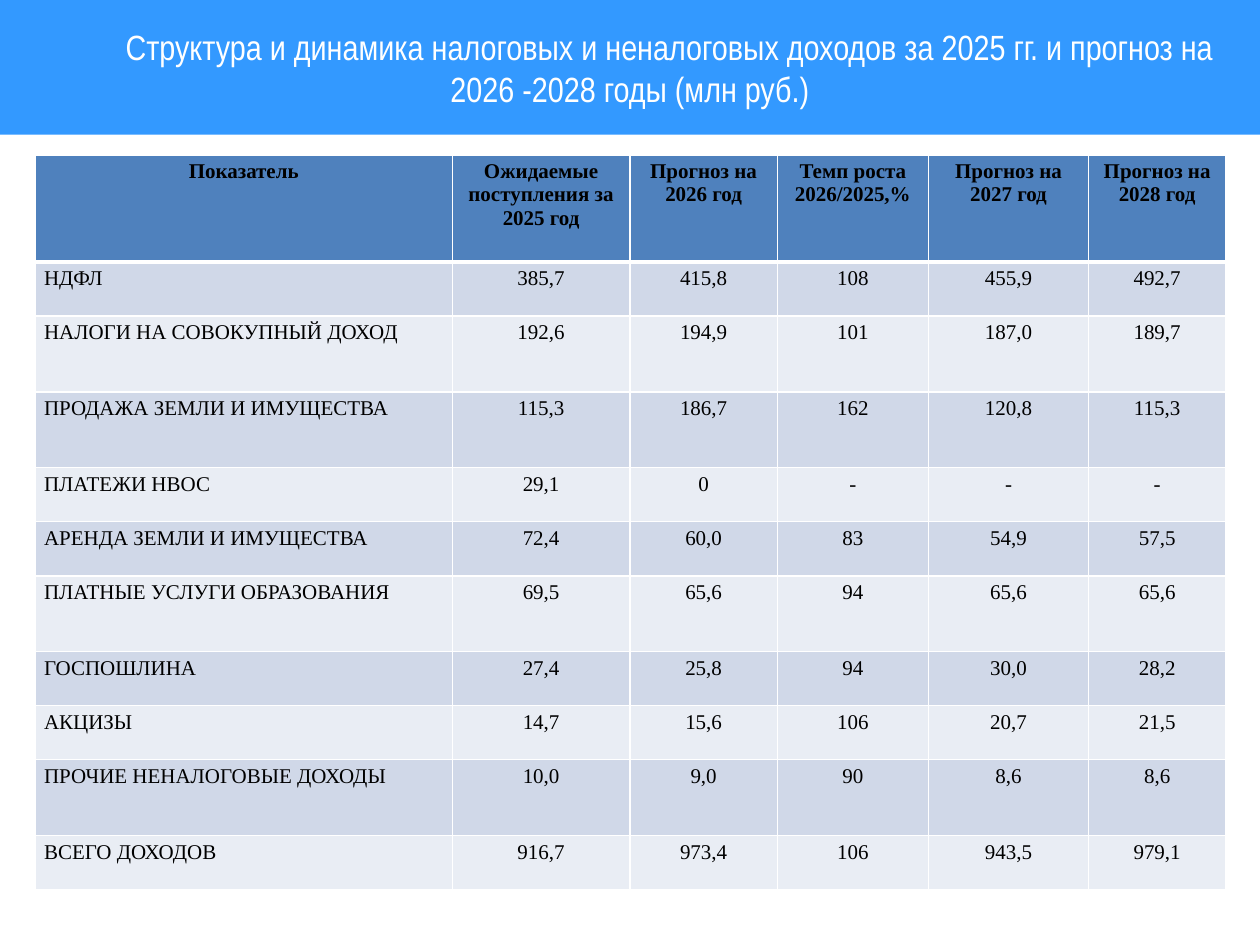
from dataclasses import dataclass

from lxml.etree import SubElement
from pptx import Presentation
from pptx.dml.color import RGBColor
from pptx.enum.shapes import MSO_SHAPE
from pptx.enum.text import MSO_ANCHOR, PP_ALIGN
from pptx.oxml.ns import qn
from pptx.util import Inches, Pt

COLORS = {
    "banner": "3399FF",
    "header": "4F81BD",
    "odd": "D0D8E8",
    "even": "E9EDF4",
    "white": "FFFFFF",
    "black": "000000",
}
TITLE = (
    "Структура и динамика налоговых и неналоговых доходов "
    "за 2025 гг. и прогноз на 2026 -2028 годы (млн руб.)"
)
TITLE_FONT = {"name": "Arial Narrow", "size": Pt(20)}
TABLE_FONT = {"name": "Times New Roman", "size": Pt(12)}
CELL_MARGINS = {
    "margin_left": Inches(0.07),
    "margin_right": Inches(0.07),
    "margin_top": Inches(0.04),
    "margin_bottom": Inches(0.04),
}
COLUMN_WIDTHS = (3.31, 1.41, 1.17, 1.2, 1.27, 1.09)
HEADER_HEIGHT, SHORT, TALL = 0.85, 0.43, 0.6


@dataclass
class Income:
    label: str
    values: tuple
    height: float = SHORT


HEADER = Income(
    "Показатель",
    (
        "Ожидаемые поступления за 2025 год",
        "Прогноз на 2026 год",
        "Темп роста 2026/2025,%",
        "Прогноз на 2027 год",
        "Прогноз на 2028 год",
    ),
    HEADER_HEIGHT,
)
INCOMES = (
    Income("НДФЛ", ("385,7", "415,8", "108", "455,9", "492,7")),
    Income("НАЛОГИ НА СОВОКУПНЫЙ ДОХОД", ("192,6", "194,9", "101", "187,0", "189,7"), TALL),
    Income("ПРОДАЖА ЗЕМЛИ И ИМУЩЕСТВА", ("115,3", "186,7", "162", "120,8", "115,3"), TALL),
    Income("ПЛАТЕЖИ НВОС", ("29,1", "0", "-", "-", "-")),
    Income("АРЕНДА ЗЕМЛИ И ИМУЩЕСТВА", ("72,4", "60,0", "83", "54,9", "57,5")),
    Income("ПЛАТНЫЕ УСЛУГИ ОБРАЗОВАНИЯ", ("69,5", "65,6", "94", "65,6", "65,6"), TALL),
    Income("ГОСПОШЛИНА", ("27,4", "25,8", "94", "30,0", "28,2")),
    Income("АКЦИЗЫ", ("14,7", "15,6", "106", "20,7", "21,5")),
    Income("ПРОЧИЕ НЕНАЛОГОВЫЕ ДОХОДЫ", ("10,0", "9,0", "90", "8,6", "8,6"), TALL),
    Income("ВСЕГО ДОХОДОВ", ("916,7", "973,4", "106", "943,5", "979,1")),
)


def rgb(key: str) -> RGBColor:
    return RGBColor.from_string(COLORS[key])


def apply_format(target, values: dict) -> None:
    for attribute, value in values.items():
        setattr(target, attribute, value)


def set_borders(cell, top: float, bottom: float) -> None:
    properties = cell._tc.get_or_add_tcPr()
    for side, width in {"lnL": 1, "lnR": 1, "lnT": top, "lnB": bottom}.items():
        border = SubElement(properties, qn(f"a:{side}"), w=str(Pt(width)))
        fill = SubElement(border, qn("a:solidFill"))
        SubElement(fill, qn("a:srgbClr"), val=COLORS["white"])


def write_cell(cell, text: str, row: int, column: int) -> None:
    is_header = row == 0
    set_borders(cell, top=3 if row == 1 else 1, bottom=3 if is_header else 1)
    cell.fill.solid()
    band = "header" if is_header else ("odd" if row % 2 else "even")
    cell.fill.fore_color.rgb = rgb(band)
    apply_format(cell, CELL_MARGINS)
    paragraph = cell.text_frame.paragraphs[0]
    paragraph.alignment = PP_ALIGN.CENTER if is_header or column else PP_ALIGN.LEFT
    run = paragraph.add_run()
    run.text = text
    apply_format(run.font, {**TABLE_FONT, "bold": is_header})
    run.font.color.rgb = rgb("black")


def add_income_table(slide) -> None:
    rows = (HEADER, *INCOMES)
    table = slide.shapes.add_table(
        len(rows), len(COLUMN_WIDTHS), Inches(0.28), Inches(1.23),
        Inches(sum(COLUMN_WIDTHS)), Inches(sum(row.height for row in rows)),
    ).table
    for column, width in zip(table.columns, COLUMN_WIDTHS):
        column.width = Inches(width)
    for row_index, income in enumerate(rows):
        table.rows[row_index].height = Inches(income.height)
        for column_index, text in enumerate((income.label, *income.values)):
            write_cell(table.cell(row_index, column_index), text, row_index, column_index)


def add_banner(slide) -> None:
    banner = slide.shapes.add_shape(
        MSO_SHAPE.RECTANGLE, Inches(0), Inches(0), Inches(10), Inches(1.07)
    )
    banner.shadow.inherit = False
    banner.fill.solid()
    banner.fill.fore_color.rgb = rgb("banner")
    banner.line.fill.background()
    apply_format(banner.text_frame, {"word_wrap": True, "vertical_anchor": MSO_ANCHOR.MIDDLE})
    title = banner.text_frame.paragraphs[0]
    title.alignment = PP_ALIGN.CENTER
    title._p.get_or_add_pPr().set("indent", str(Inches(0.63)))
    run = title.add_run()
    run.text = TITLE
    apply_format(run.font, TITLE_FONT)
    run.font.color.rgb = rgb("white")


def main() -> None:
    presentation = Presentation()
    apply_format(presentation, {"slide_width": Inches(10), "slide_height": Inches(7.5)})
    slide = presentation.slides.add_slide(presentation.slide_layouts[6])
    add_income_table(slide)
    add_banner(slide)
    presentation.save("out.pptx")


if __name__ == "__main__":
    main()
